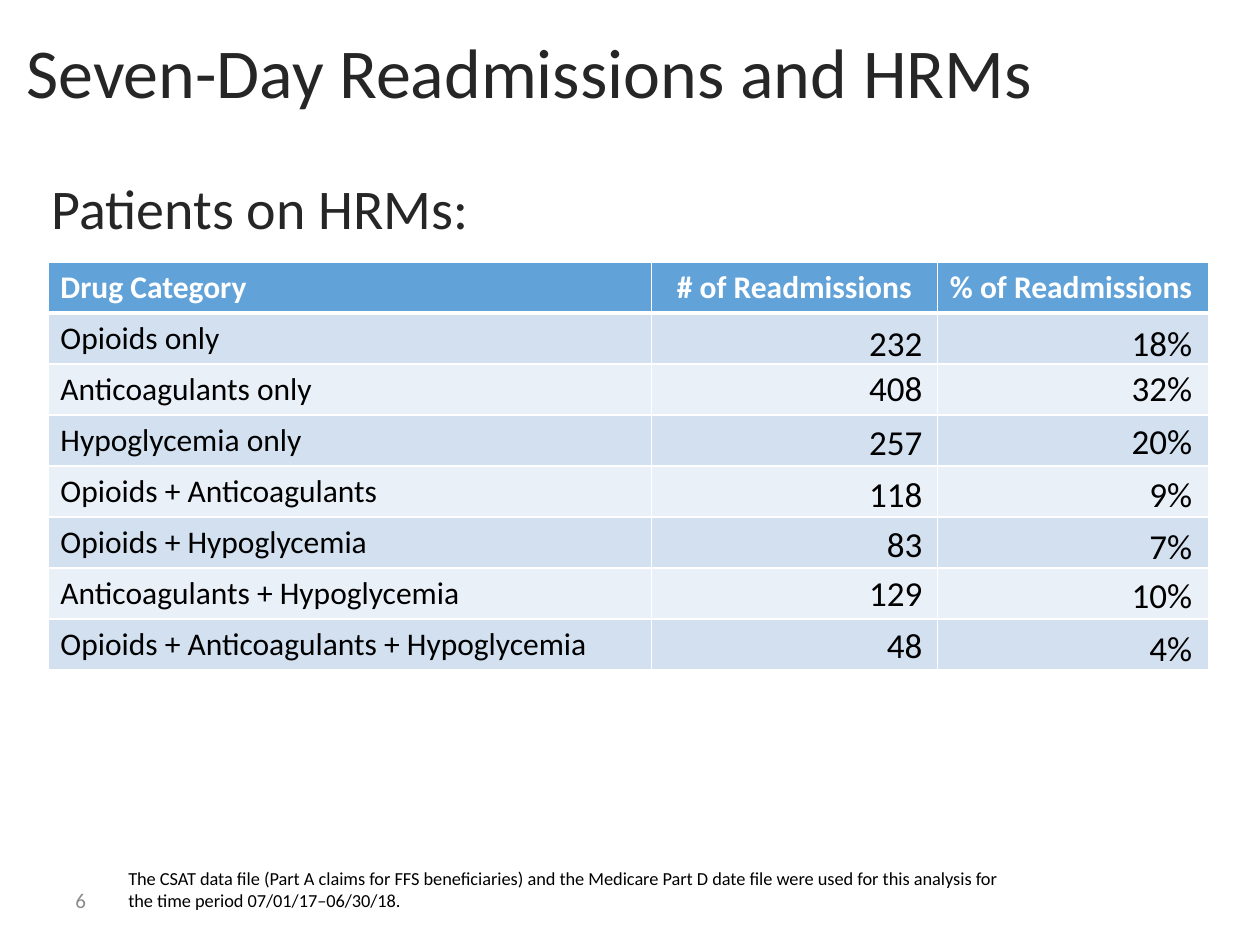
from pptx import Presentation
from pptx.dml.color import RGBColor as Rgb
from pptx.enum.text import MSO_ANCHOR as Anchor, MSO_AUTO_SIZE as Fit, PP_ALIGN as Align
from pptx.oxml import parse_xml as parse_el
from pptx.oxml.ns import nsdecls
from pptx.util import Inches, Pt

HUES = {
    "white": "FFFFFF", "black": "000000", "ink": "262626", "gray": "8C8C8C",
    "head": "61A2D8", "dark": "D2E0F0", "light": "EAF0F8",
}
HEADS = ["Drug Category", "# of Readmissions", "% of Readmissions"]
DRUGS = [
    "Opioids only", "Anticoagulants only", "Hypoglycemia only",
    "Opioids + Anticoagulants", "Opioids + Hypoglycemia",
    "Anticoagulants + Hypoglycemia", "Opioids + Anticoagulants + Hypoglycemia",
]
COUNTS = [
    (7.42, ["232", "408", "257", "118", "83", "129", "48"],
     [2.5, 2.86, 3.29, 3.7, 4.1, 4.49, 4.9]),
    (9.56, ["18%", "32%", "20%", "9%", "7%", "10%", "4%"],
     [2.5, 2.86, 3.28, 3.7, 4.11, 4.5, 4.92]),
]


class Deck:
    def __init__(self, slide, face="Calibri"):
        self.slide = slide
        self.face = face

    def style(self, para, size, hue, bold=False, align=Align.LEFT):
        para.alignment = align
        font = para.font
        font.name, font.size, font.bold = self.face, Pt(size), bold
        font.color.rgb = Rgb.from_string(HUES[hue])

    def text(self, words, spot, size, hue="black", align=Align.LEFT,
             anchor=Anchor.TOP, wrap=True, grow=False, pad=0.1):
        box = self.slide.shapes.add_textbox(*map(Inches, spot))
        frame = box.text_frame
        frame.word_wrap = wrap
        frame.auto_size = Fit.SHAPE_TO_FIT_TEXT if grow else Fit.NONE
        frame.vertical_anchor = anchor
        frame.margin_left = frame.margin_right = Inches(pad)
        para = frame.paragraphs[0]
        para.text = words
        self.style(para, size, hue, align=align)
        return para

    def value(self, words, right, top):
        width = 0.21 + 0.14 * len(words) + 0.06 * words.endswith("%")
        self.text(words, (right - width, top, width, 0.44), 20,
                  align=Align.RIGHT, wrap=False, grow=True)

    def edges(self, cell, top, base):
        props = cell._tc.get_or_add_tcPr()
        for i, (side, width) in enumerate(zip("LRTB", (1, 1, top, base))):
            props.insert(i, parse_el(
                f'<a:ln{side} {nsdecls("a")} w="{Pt(width)}"><a:solidFill>'
                f'<a:srgbClr val="{HUES["white"]}"/></a:solidFill></a:ln{side}>'))

    def table(self, rows, spot, widths):
        grid = self.slide.shapes.add_table(
            len(rows), len(widths), *map(Inches, spot)).table
        for col, width in zip(grid.columns, widths):
            col.width = Inches(width)
        for r, row in enumerate(rows):
            fill = "head" if r == 0 else "dark" if r % 2 else "light"
            for c, words in enumerate(row):
                cell = grid.cell(r, c)
                cell.fill.solid()
                cell.fill.fore_color.rgb = Rgb.from_string(HUES[fill])
                self.edges(cell, 3 if r == 1 else 1, 3 if r == 0 else 1)
                para = cell.text_frame.paragraphs[0]
                para.text = words
                mid = r == 0 and c == 1
                self.style(para, 18, "black" if r else "white", r == 0,
                           Align.CENTER if mid else Align.LEFT)


def main():
    show = Presentation()
    show.slide_width, show.slide_height = Inches(10), Inches(7.5)
    deck = Deck(show.slides.add_slide(show.slide_layouts[6]))
    deck.text("6", (0.5, 6.95, 0.92, 0.38), 12, "gray", anchor=Anchor.MIDDLE)
    title = deck.text("Seven-Day Readmissions and HRMs", (0.21, 0.04, 9.5, 1.17),
                      40, "ink", anchor=Anchor.MIDDLE, pad=0)
    title.line_spacing = 0.8
    deck.text("The CSAT data file (Part A claims for FFS beneficiaries) and the "
              "Medicare Part D date file were used for this analysis for the "
              "time period 07/01/17–06/30/18.", (0.92, 6.83, 7.17, 0.45), 10.5,
              grow=True)
    lead = deck.text("Patients on HRMs:", (0.31, 1.33, 9, 0.75), 32, "ink")
    lead.space_after = Pt(6)
    deck.table([HEADS] + [[drug, "", ""] for drug in DRUGS],
               (0.38, 2.08, 9.21, 3.24), [4.79, 2.27, 2.15])
    for right, values, tops in COUNTS:
        for words, top in zip(values, tops):
            deck.value(words, right, top)
    show.save("out.pptx")


if __name__ == "__main__":
    main()
